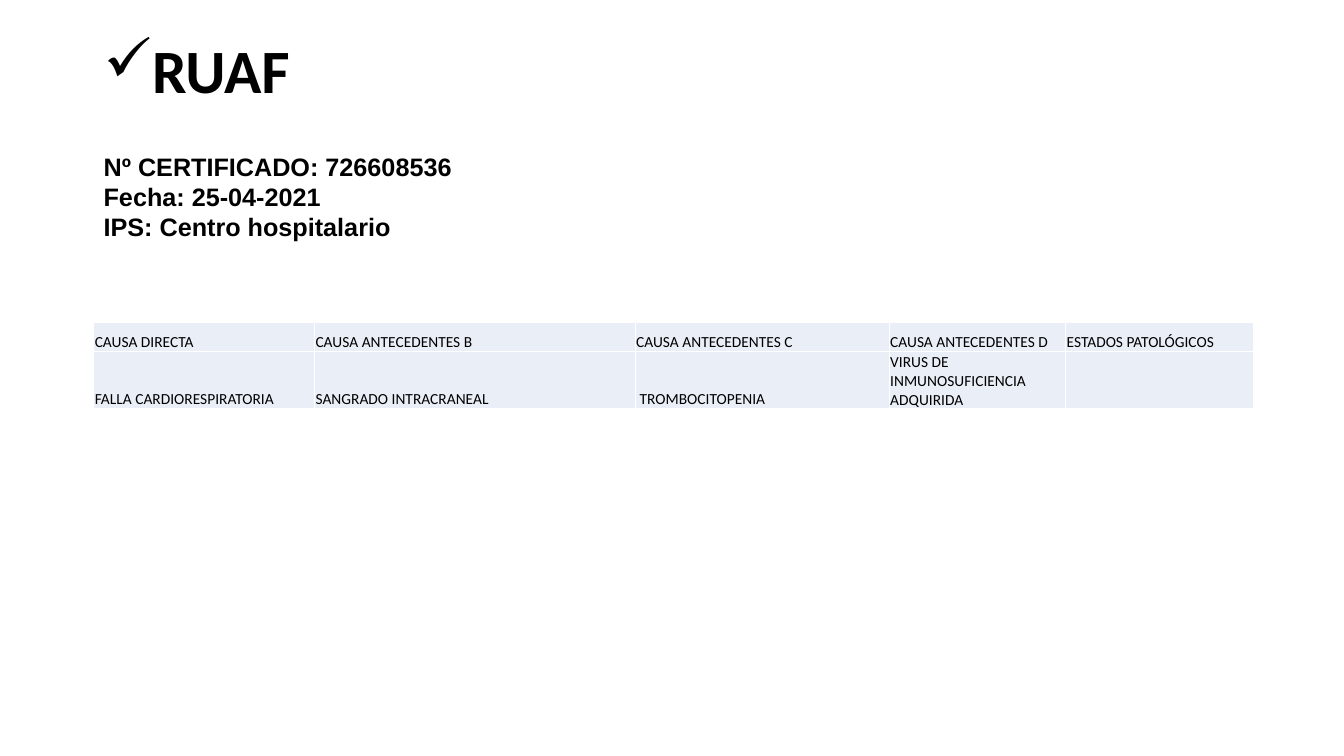
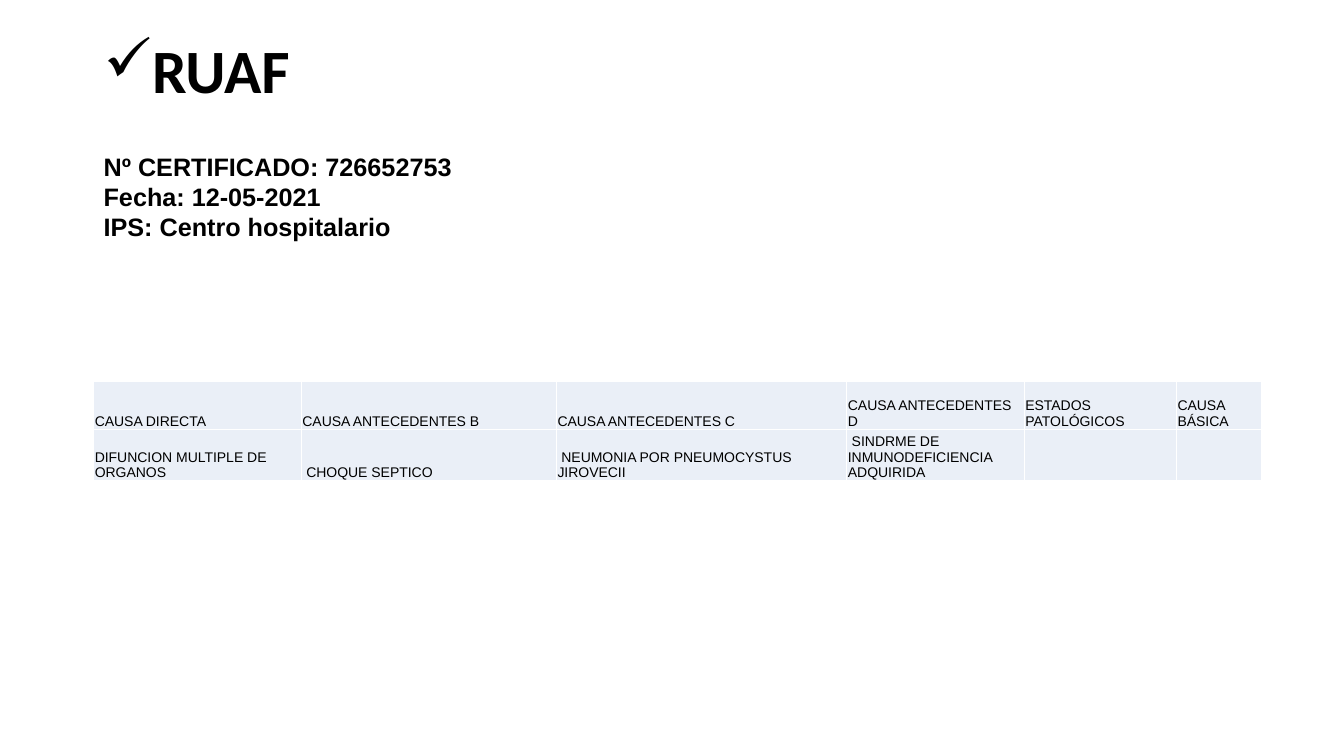
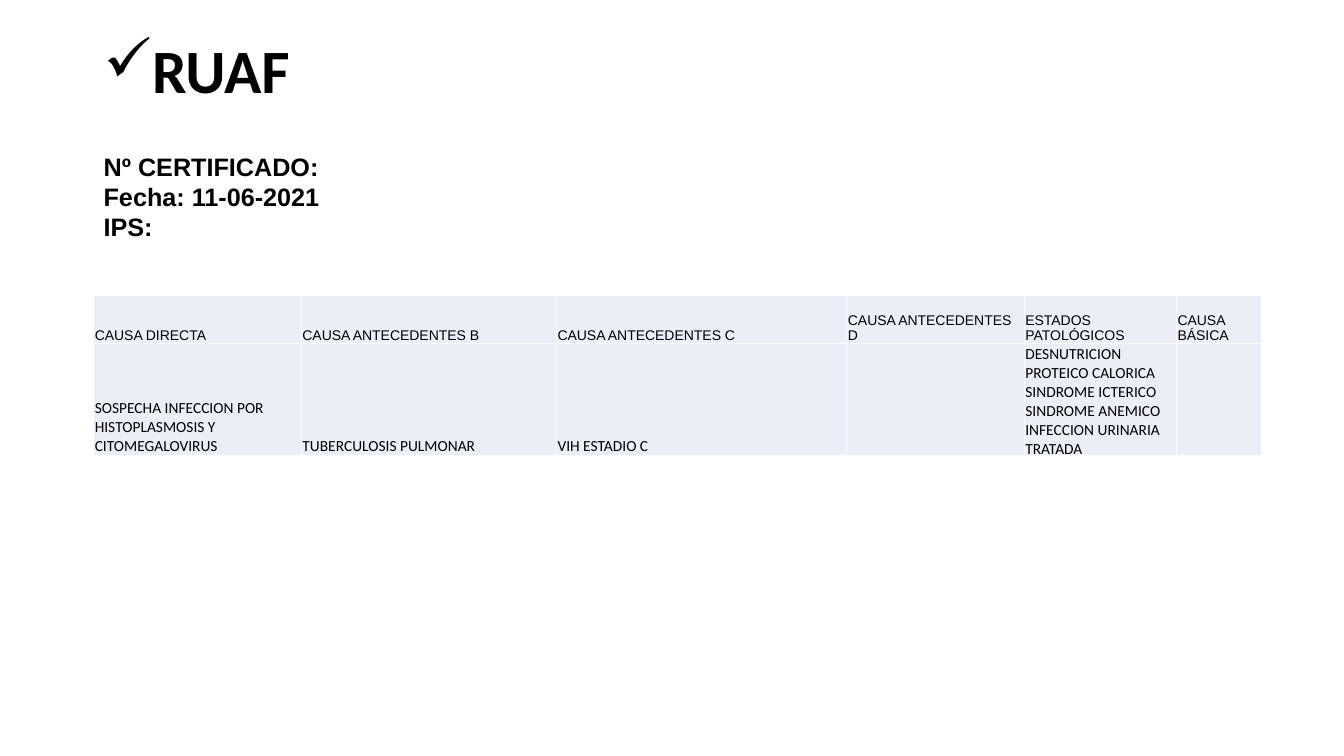
import lxml.etree
import pptx
import pptx.dml.color
import pptx.enum.text
import pptx.oxml
import pptx.oxml.ns
import pptx.util

PX = 9144  # EMU; 100 px to the inch
BLACK = pptx.dml.color.RGBColor(0x00, 0x00, 0x00)
WHITE = pptx.dml.color.RGBColor(0xFF, 0xFF, 0xFF)
PALE_BLUE = pptx.dml.color.RGBColor(0xEA, 0xEF, 0xF7)
ANCHOR = pptx.enum.text.MSO_ANCHOR

LEFT = 93
TITLE_BOX = (LEFT, 0, 1150, 145)
CERTIFICATE_BOX = (LEFT, 145, 950, 101)
BULLET_INDENT = 31
CLINIC = "Centro hospitalario"

FIVE_CAUSES = ["CAUSA DIRECTA", "CAUSA ANTECEDENTES B", "CAUSA ANTECEDENTES C",
               "CAUSA ANTECEDENTES D", "ESTADOS PATOLÓGICOS"]
SIX_CAUSES = FIVE_CAUSES + ["CAUSA BÁSICA"]
FIVE_WIDTHS = [219, 318, 252, 175, 186]
SIX_WIDTHS = [206, 253, 288, 176, 151, 84]
CALIBRI_11 = ("Calibri", 11)
ARIAL_10 = ("Arial", 10)


def px(length):
    return pptx.util.Emu(length * PX)


def set_font(paragraph, name, size, bold=False):
    font = paragraph.font
    font.name, font.size, font.bold = name, pptx.util.Pt(size), bold
    font.color.rgb = BLACK


def add_text(slide, box, lines, font_name, size, anchor):
    frame = slide.shapes.add_textbox(*map(px, box)).text_frame
    frame.word_wrap = True
    frame.vertical_anchor = anchor
    frame.text = "\n".join(lines)
    for paragraph in frame.paragraphs:
        set_font(paragraph, font_name, size, bold=True)
    return frame


def add_title(slide):
    frame = add_text(slide, TITLE_BOX, ["RUAF"], "Calibri", 44, ANCHOR.MIDDLE)
    heading = frame.paragraphs[0]
    heading.line_spacing = 0.9
    properties = heading._p.get_or_add_pPr()
    properties.set("marL", str(px(BULLET_INDENT)))
    properties.set("indent", str(-px(BULLET_INDENT)))
    bullet = pptx.oxml.parse_xml(
        f'<a:buChar {pptx.oxml.ns.nsdecls("a")} char="✓"/>')
    properties.find(pptx.oxml.ns.qn("a:defRPr")).addprevious(bullet)


def add_certificate(slide, number, date, clinic):
    lines = [f"Nº CERTIFICADO: {number}".strip(), f"Fecha: {date}",
             f"IPS: {clinic}".strip()]
    add_text(slide, CERTIFICATE_BOX, lines, "Arial", 18, ANCHOR.TOP)


def add_borders(cell):
    properties = cell._tc.get_or_add_tcPr()
    for side in ("lnL", "lnR", "lnT", "lnB"):
        line = lxml.etree.SubElement(properties, pptx.oxml.ns.qn(f"a:{side}"),
                                     w=str(pptx.util.Pt(1)))
        fill = lxml.etree.SubElement(line, pptx.oxml.ns.qn("a:solidFill"))
        lxml.etree.SubElement(fill, pptx.oxml.ns.qn("a:srgbClr"), val=str(WHITE))


def fill_cell(cell, text, font):
    add_borders(cell)
    cell.fill.solid()
    cell.fill.fore_color.rgb = PALE_BLUE
    cell.vertical_anchor = ANCHOR.BOTTOM
    cell.margin_left = cell.margin_right = cell.margin_top = px(1)
    cell.margin_bottom = 0
    cell.text = text
    set_font(cell.text_frame.paragraphs[0], *font)


def add_causes(slide, top, widths, heights, rows, fonts):
    """Table of causes of death; fonts holds one (name, size) per row."""
    table = slide.shapes.add_table(
        len(rows), len(widths), px(LEFT), px(top),
        px(sum(widths)), px(sum(heights))).table
    table.first_row = table.horz_banding = False
    for column, width in zip(table.columns, widths):
        column.width = px(width)
    for row, height, texts, font in zip(table.rows, heights, rows, fonts):
        row.height = px(height)
        for cell, text in zip(row.cells, texts):
            fill_cell(cell, text, font)


def main():
    deck = pptx.Presentation()
    deck.slide_width, deck.slide_height = px(1333), px(750)

    certificates = [
        (("726608536", "25-04-2021", CLINIC),
         (320, FIVE_WIDTHS, (29, 56),
          (FIVE_CAUSES,
           ["FALLA CARDIORESPIRATORIA", "SANGRADO INTRACRANEAL",
            " TROMBOCITOPENIA", "VIRUS DE INMUNOSUFICIENCIA ADQUIRIDA", ""]),
          (CALIBRI_11, CALIBRI_11))),
        (("726652753", "12-05-2021", CLINIC),
         (378, SIX_WIDTHS, (48, 50),
          (SIX_CAUSES,
           ["DIFUNCION MULTIPLE DE ORGANOS", " CHOQUE SEPTICO",
            " NEUMONIA POR PNEUMOCYSTUS JIROVECII",
            " SINDRME DE INMUNODEFICIENCIA ADQUIRIDA", "", ""]),
          (ARIAL_10, ARIAL_10))),
        (("", "11-06-2021", ""),
         (293, SIX_WIDTHS, (48, 111),
          (SIX_CAUSES,
           ["SOSPECHA INFECCION POR HISTOPLASMOSIS Y CITOMEGALOVIRUS",
            "TUBERCULOSIS PULMONAR", "VIH ESTADIO C", "",
            "DESNUTRICION PROTEICO CALORICA SINDROME ICTERICO "
            "SINDROME ANEMICO INFECCION URINARIA TRATADA", ""]),
          (ARIAL_10, CALIBRI_11))),
    ]
    for certificate, causes in certificates:
        slide = deck.slides.add_slide(deck.slide_layouts[6])
        add_title(slide)
        add_certificate(slide, *certificate)
        add_causes(slide, *causes)

    deck.save("out.pptx")


if __name__ == "__main__":
    main()
